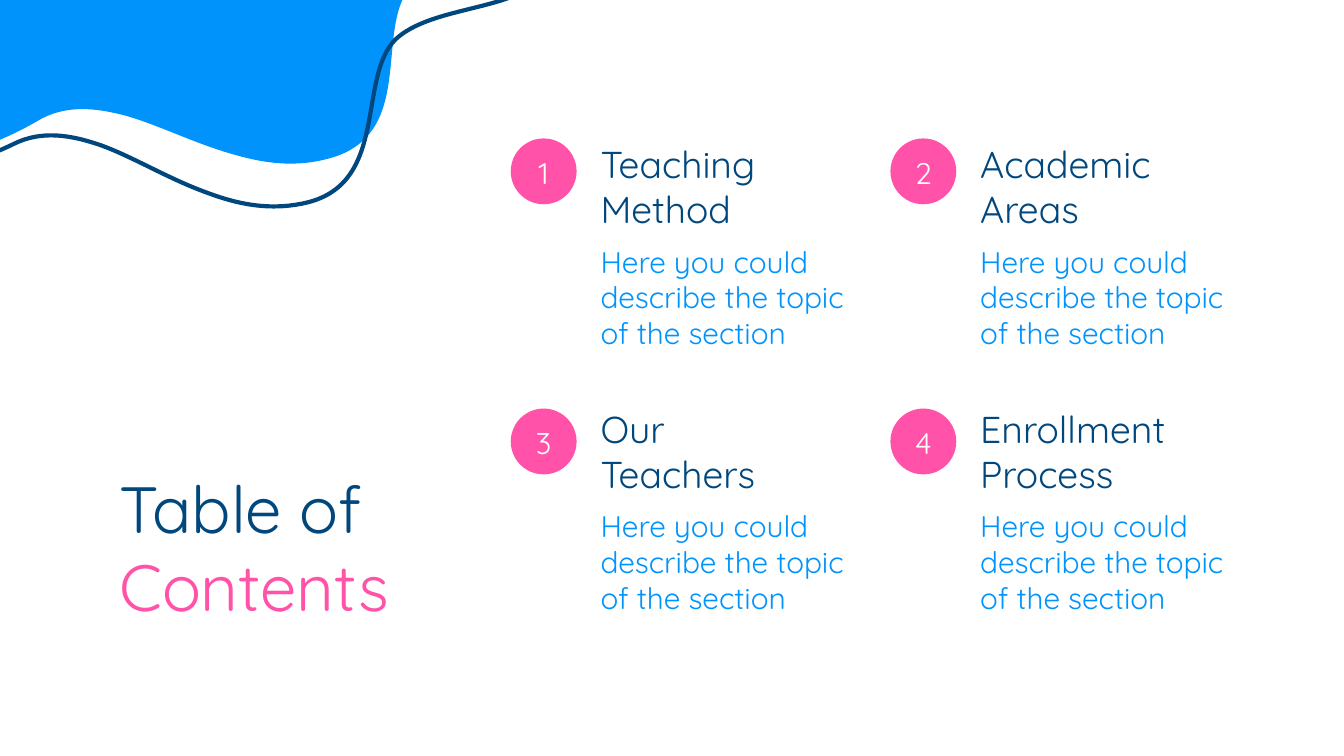
from dataclasses import dataclass, replace
from math import cos, radians, sin

from pptx import Presentation
from pptx.dml.color import RGBColor
from pptx.enum.shapes import MSO_SHAPE
from pptx.enum.text import MSO_ANCHOR, PP_ALIGN
from pptx.oxml.ns import qn
from pptx.oxml.xmlchemy import OxmlElement
from pptx.shapes.autoshape import Shape
from pptx.slide import Slide
from pptx.util import Inches, Pt

CELL = Inches(0.1)  # square grid cell: 100 columns by 56.25 rows
COLUMNS, ROWS = 100, 56.25
NAVY, BLUE, PINK, WHITE = "00477D", "0093FC", "FF52A8", "FFFFFF"
FONT = "Quicksand"


@dataclass(frozen=True)
class Box:
    """A rectangle in grid columns and rows."""
    column: float
    row: float
    columns: float
    rows: float

    def moved(self, columns: float, rows: float) -> "Box":
        return replace(self, column=self.column + columns, row=self.row + rows)

    def emu(self) -> list[int]:
        return [round(value * CELL)
                for value in (self.column, self.row, self.columns, self.rows)]


@dataclass(frozen=True)
class TextStyle:
    size: float
    color: str
    anchor: MSO_ANCHOR = MSO_ANCHOR.TOP
    alignment: PP_ALIGN = PP_ALIGN.LEFT


@dataclass(frozen=True)
class Section:
    number: str
    heading: list[str]
    column: int
    row: int


TITLE = TextStyle(35, NAVY, MSO_ANCHOR.BOTTOM)
HEADING = TextStyle(20, NAVY, MSO_ANCHOR.BOTTOM)
DESCRIPTION = TextStyle(16, BLUE)
NUMBER = TextStyle(16, WHITE, MSO_ANCHOR.MIDDLE, PP_ALIGN.CENTER)

TITLE_BOX = Box(7.9, 29.8, 33.5, 17.7)
BADGE_BOX = Box(38, 10.3, 4.9, 4.9)
NUMBER_BOX = Box(37.5, 11.8, 5.9, 2.1)
HEADING_BOX = Box(43.7, 8, 22.4, 10.2)
DESCRIPTION_BOX = Box(43.7, 17.1, 20.3, 10.2)
COLUMN_STEP, BADGE_ROW_STEP, TEXT_ROW_STEP = 28.25, 20.1, 19.7

SECTIONS = [
    Section("1", ["Teaching Method"], 0, 0),
    Section("2", ["Academic Areas"], 1, 0),
    Section("3", ["Our", "Teachers"], 0, 1),
    Section("4", ["Enrollment Process"], 1, 1),
]

# Start point, then three points per cubic curve, in columns and rows,
# as the outline lies when turned by WAVE_ANGLE about WAVE_CENTER.
WAVE_ANGLE, WAVE_CENTER = 15.9, complex(5.55, -14.4)
WAVE = [
    (21.6, -44.4),
    (19.6, -44.9), (17.6, -45.3), (15.7, -45.3),
    (5.6, -45.7), (-0.5, -35.2), (-11.1, -37.6),
    (-20.8, -39.8), (-28.8, -34.7), (-26.3, -23.1),
    (-23.4, -10.2), (-35.4, -5.8), (-31.4, 6),
    (-30.5, 8.7), (-27.4, 10.7), (-23.3, 11.9),
    (-15.8, 14), (-4.7, 13.4), (2.8, 9),
    (4.8, 7.8), (7, 8), (9.3, 8.6),
    (11.8, 9.3), (14.5, 10.7), (17.4, 11.5),
    (19.8, 12.2), (22.2, 12.5), (24.8, 11.7),
    (30.9, 9.8), (27.9, 2.2), (30.5, -0.9),
    (33, -3.7), (39.4, -3.7), (41.3, -6.6),
    (45.2, -12.7), (35.1, -17.2), (36.7, -26.5),
    (38.3, -35.5), (29.8, -42), (21.6, -44.4),
]


def rgb(color: str) -> RGBColor:
    return RGBColor.from_string(color)


def turn(degrees: float) -> complex:
    """Factor that rotates a point, held as a complex number."""
    return complex(cos(radians(degrees)), sin(radians(degrees)))


def lines_to_curves(shape: Shape) -> None:
    """Make each three line segments of a freeform one cubic curve."""
    path = shape._element.find(".//" + qn("a:path"))
    lines = path.findall(qn("a:lnTo"))
    for start in range(0, len(lines), 3):
        curve = OxmlElement("a:cubicBezTo")
        lines[start].addprevious(curve)
        for line in lines[start:start + 3]:
            curve.append(line[0])
            path.remove(line)


def add_wave(slide: Slide, center: complex, angle: float) -> Shape:
    upright = [(complex(*point) - WAVE_CENTER) * turn(-WAVE_ANGLE) for point in WAVE]
    points = [(point.real * CELL, point.imag * CELL) for point in upright]
    builder = slide.shapes.build_freeform(*points[0], scale=1.0)
    builder.add_line_segments(points[1:], close=True)
    wave = builder.convert_to_shape()
    middle = complex(wave.left + wave.width / 2, wave.top + wave.height / 2)
    placed = center * CELL + middle * turn(angle)
    wave.left = round(placed.real - wave.width / 2)
    wave.top = round(placed.imag - wave.height / 2)
    wave.rotation = angle
    wave.shadow.inherit = False
    lines_to_curves(wave)
    return wave


def fill_shape(shape: Shape, color: str) -> None:
    shape.fill.solid()
    shape.fill.fore_color.rgb = rgb(color)
    shape.line.fill.background()


def add_badge(slide: Slide, box: Box) -> None:
    badge = slide.shapes.add_shape(MSO_SHAPE.OVAL, *box.emu())
    badge.shadow.inherit = False
    fill_shape(badge, PINK)


def add_text(slide: Slide, box: Box, paragraphs: list[list[tuple[str, str]]],
             style: TextStyle) -> None:
    """Add paragraphs, each a list of (text, color) runs."""
    frame = slide.shapes.add_textbox(*box.emu()).text_frame
    frame_format = {"word_wrap": True, "vertical_anchor": style.anchor}
    frame_format |= {f"margin_{side}": CELL for side in ("left", "top", "right", "bottom")}
    for name, value in frame_format.items():
        setattr(frame, name, value)
    for index, runs in enumerate(paragraphs):
        paragraph = frame.add_paragraph() if index else frame.paragraphs[0]
        paragraph.alignment = style.alignment
        for text, color in runs:
            run = paragraph.add_run()
            run.text = text
            for name, value in {"name": FONT, "size": Pt(style.size)}.items():
                setattr(run.font, name, value)
            run.font.color.rgb = rgb(color)


def add_section(slide: Slide, section: Section) -> None:
    across = section.column * COLUMN_STEP
    badge_down = section.row * BADGE_ROW_STEP
    text_down = section.row * TEXT_ROW_STEP
    add_badge(slide, BADGE_BOX.moved(across, badge_down))
    description = "Here you could describe the topic of the section"
    for box, down, lines, style in (
        (HEADING_BOX, text_down, section.heading, HEADING),
        (DESCRIPTION_BOX, text_down, [description], DESCRIPTION),
        (NUMBER_BOX, badge_down, [section.number], NUMBER),
    ):
        paragraphs = [[(line, style.color)] for line in lines]
        add_text(slide, box.moved(across, down), paragraphs, style)


def main() -> None:
    presentation = Presentation()
    presentation.slide_width = COLUMNS * CELL
    presentation.slide_height = round(ROWS * CELL)
    slide = presentation.slides.add_slide(presentation.slide_layouts[6])

    fill_shape(add_wave(slide, WAVE_CENTER, WAVE_ANGLE), BLUE)
    outline = add_wave(slide, WAVE_CENTER + 2j, 20.3)
    outline.fill.background()
    outline.line.color.rgb = rgb(NAVY)
    outline.line.width = Pt(2.25)

    add_text(slide, TITLE_BOX, [[("Table of ", NAVY), ("Contents", PINK)]], TITLE)
    for section in SECTIONS:
        add_section(slide, section)
    presentation.save("out.pptx")


if __name__ == "__main__":
    main()
